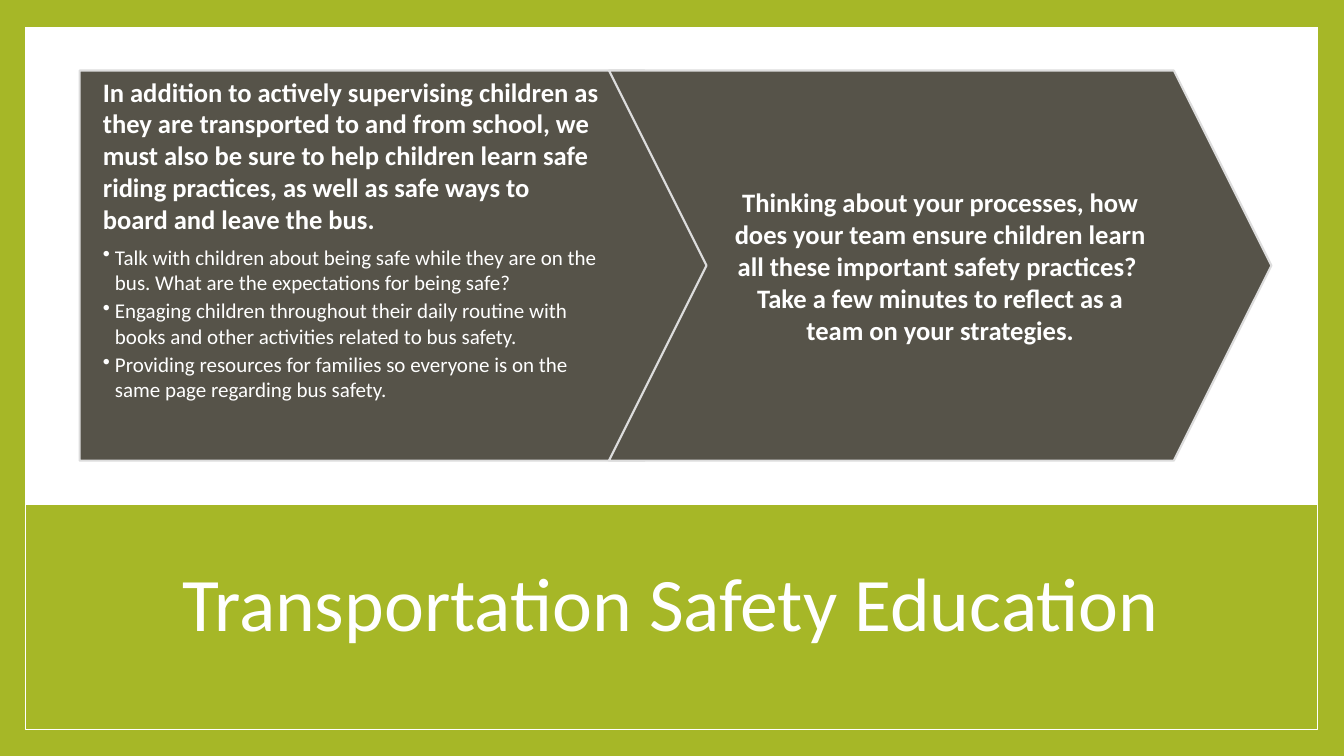
from lxml import etree
from pptx import Presentation
from pptx.dml.color import RGBColor
from pptx.enum.shapes import MSO_SHAPE
from pptx.enum.text import MSO_ANCHOR, MSO_AUTO_SIZE, PP_ALIGN
from pptx.oxml.ns import qn
from pptx.util import Inches, Pt

RECTANGLE = MSO_SHAPE.RECTANGLE
PENTAGON = MSO_SHAPE.PENTAGON
CHEVRON = MSO_SHAPE.CHEVRON
TOP, MIDDLE = MSO_ANCHOR.TOP, MSO_ANCHOR.MIDDLE
LEFT, CENTER = PP_ALIGN.LEFT, PP_ALIGN.CENTER

COLORS = {"green": "A6B727", "white": "FFFFFF", "stone": "565349", "edge": "DDDDDD"}
FONT = "Calibri"
ARROW_TOP, ARROW_HEIGHT = 0.7, 3.87

SUPERVISION = (
    "In addition to actively supervising children as they are transported to and from "
    "school, we must also be sure to help children learn safe riding practices, as well "
    "as safe ways to board and leave the bus."
)
PRACTICES = [
    "Talk with children about being safe while they are on the bus. "
    "What are the expectations for being safe?",
    "Engaging children throughout their daily routine with books and other activities "
    "related to bus safety.",
    "Providing resources for families so everyone is on the same page regarding bus safety.",
]
REFLECTION = (
    "Thinking about your processes, how does your team ensure children learn all these "
    "important safety practices?  Take a few minutes to reflect as a team on your strategies."
)


def add_panel(page, kind, place, fill, line=None, width=1):
    panel = page.shapes.add_shape(kind, *[Inches(length) for length in place])
    panel.shadow.inherit = False
    panel.fill.solid()
    panel.fill.fore_color.rgb = RGBColor.from_string(COLORS[fill])
    if line:
        panel.line.color.rgb = RGBColor.from_string(COLORS[line])
        panel.line.width = Pt(width)
    else:
        panel.line.fill.background()
    return panel


def style_text(para, size, bold, align):
    para.alignment = align
    for span in para.runs:
        span.font.name = FONT
        span.font.size = Pt(size)
        span.font.bold = bold
        span.font.color.rgb = RGBColor.from_string(COLORS["white"])


deck = Presentation()
deck.slide_width, deck.slide_height = Inches(13.33), Inches(7.5)
page = deck.slides.add_slide(deck.slide_layouts[5])

add_panel(page, RECTANGLE, (0, 0, 13.33, 7.5), "green")
add_panel(page, RECTANGLE, (0.25, 0.27, 12.82, 6.97), "white")
add_panel(page, RECTANGLE, (0.25, 5, 12.82, 2.24), "green", "white")

title = page.shapes.title
title.element.getparent().append(title.element)
title.left, title.top = Inches(1.25), Inches(5.28)
title.width, title.height = Inches(10.8), Inches(1.48)
title.text_frame.text = "Transportation Safety Education"
title.text_frame.vertical_anchor = MIDDLE
title.text_frame.word_wrap = True
title.text_frame.auto_size = MSO_AUTO_SIZE.NONE
title.text_frame.paragraphs[0].line_spacing = 0.9
style_text(title.text_frame.paragraphs[0], 54, False, CENTER)

arrows = [
    (PENTAGON, 0.79, 0.79, 6.08, 0.93, TOP, LEFT, SUPERVISION, PRACTICES),
    (CHEVRON, 6.04, 7.01, 4.63, 0.23, MIDDLE, CENTER, REFLECTION, []),
]
for kind, left, text_left, text_width, right_inset, anchor, align, lead, bullets in arrows:
    arrow = add_panel(
        page, kind, (left, ARROW_TOP, 6.57, ARROW_HEIGHT), "stone", "edge", 1.5
    )
    arrow.adjustments[0] = 0.25

    box = page.shapes.add_textbox(
        Inches(text_left), Inches(ARROW_TOP), Inches(text_width), Inches(ARROW_HEIGHT)
    )
    frame = box.text_frame
    frame.word_wrap = True
    frame.vertical_anchor = anchor
    frame.margin_left, frame.margin_right = Inches(0.23), Inches(right_inset)
    frame.margin_top = frame.margin_bottom = Inches(0.05)
    frame.text = lead
    frame.paragraphs[0].space_after = Pt(6.65)
    style_text(frame.paragraphs[0], 19, True, align)

    for bullet in bullets:
        para = frame.add_paragraph()
        para.text = bullet
        para.level = 1
        para.space_after = Pt(2.25)
        properties = para._p.get_or_add_pPr()
        properties.set("marL", str(Inches(0.12)))
        properties.set("indent", str(Inches(-0.12)))
        etree.SubElement(properties, qn("a:buChar")).set("char", "•")
        style_text(para, 15, False, align)

deck.save("out.pptx")
